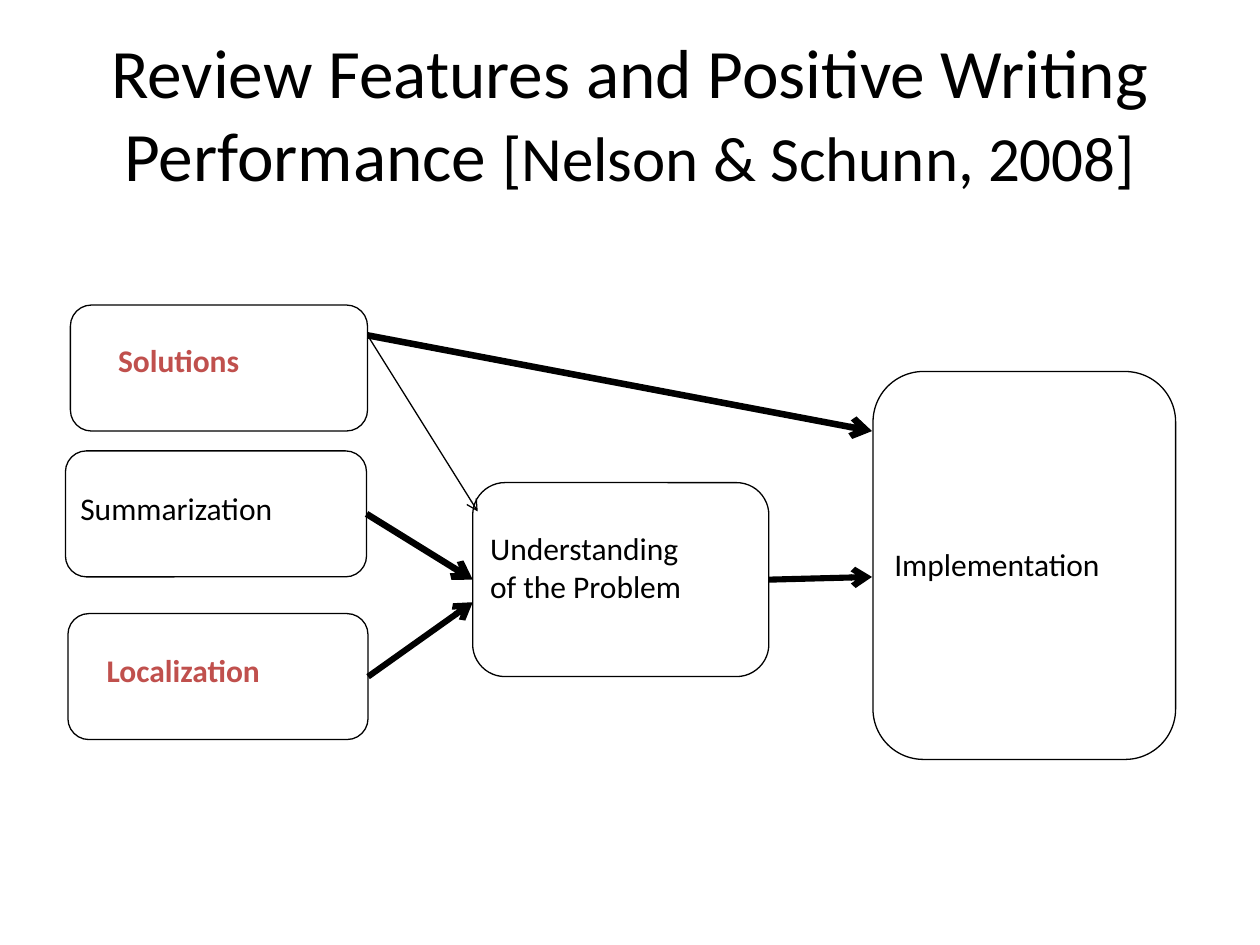
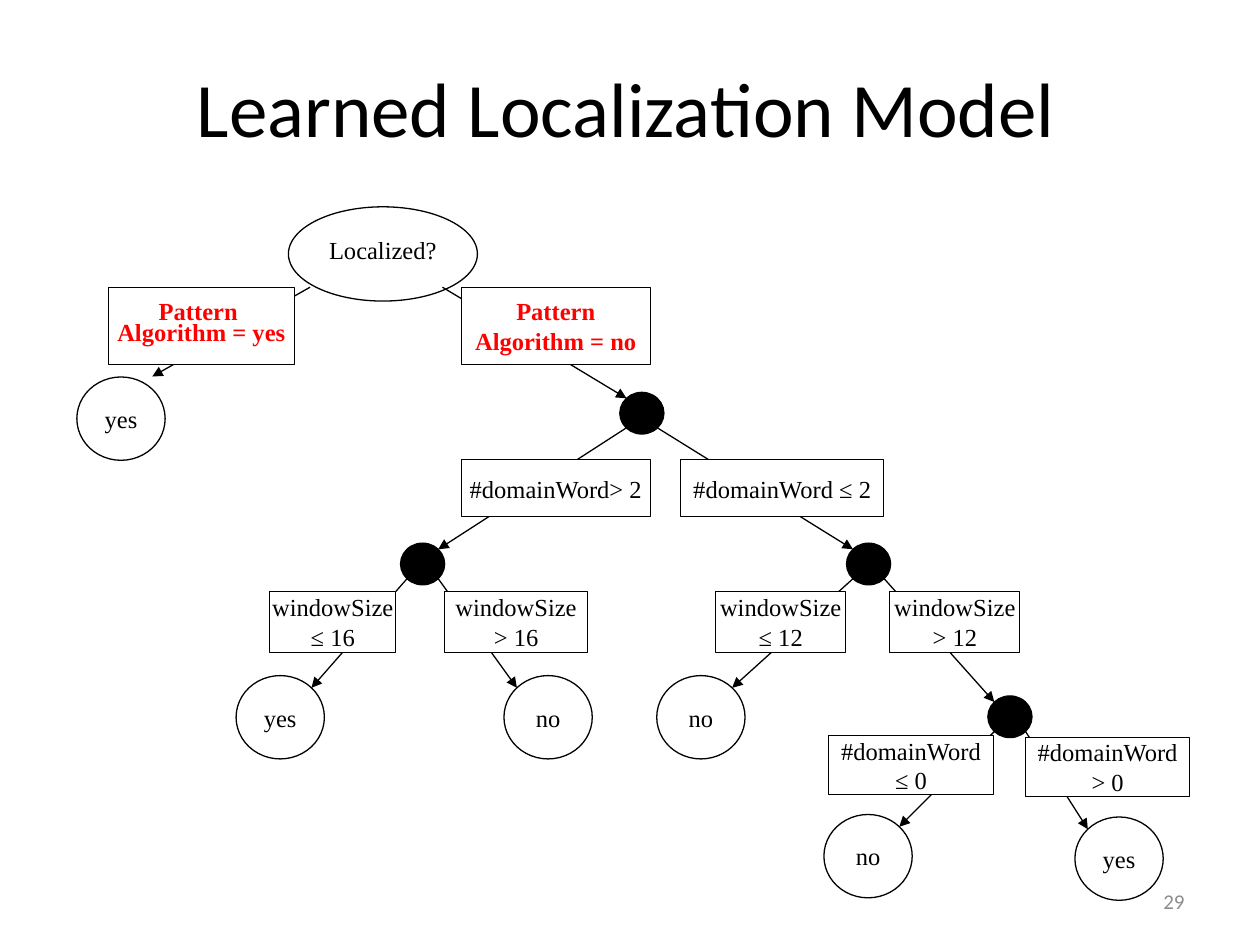
from math import sqrt

from lxml.etree import SubElement
from pptx import Presentation
from pptx.dml.color import RGBColor
from pptx.enum.shapes import MSO_CONNECTOR, MSO_SHAPE
from pptx.enum.text import MSO_ANCHOR, PP_ALIGN
from pptx.oxml.ns import qn
from pptx.util import Cm, Pt

BLACK = RGBColor(0x00, 0x00, 0x00)
WHITE = RGBColor(0xFF, 0xFF, 0xFF)
GRAY = RGBColor(0x8C, 0x8C, 0x8C)
BRICK = RGBColor(0xC0, 0x50, 0x4D)
RED = RGBColor(0xFF, 0x00, 0x00)


def write(sp, text, size=14, font="Calibri", color=BLACK, bold=False,
          align=PP_ALIGN.CENTER, anchor=MSO_ANCHOR.MIDDLE, inset=None, spacing=None):
    """Append text to the last paragraph of sp; each newline starts another."""
    tf = sp.text_frame
    tf.word_wrap = True
    tf.vertical_anchor = anchor
    if inset is not None:
        tf.margin_left = tf.margin_right = tf.margin_top = tf.margin_bottom = Cm(inset)
    for i, line in enumerate(text.split("\n")):
        p = tf.add_paragraph() if i else tf.paragraphs[-1]
        p.alignment = align
        if spacing:
            p.line_spacing = Pt(spacing)
        r = p.add_run()
        r.text = line
        r.font.name = font
        r.font.size = Pt(size)
        r.font.bold = bold
        r.font.color.rgb = color


def add_arrow(s, start, end, width=0.75, head="triangle"):
    c = s.shapes.add_connector(MSO_CONNECTOR.STRAIGHT, *(Cm(v) for v in start + end))
    c.line.color.rgb = BLACK
    c.line.width = Pt(width)
    SubElement(c._element.spPr.find(qn("a:ln")), qn("a:tailEnd"), type=head)
    SubElement(c._element.spPr, qn("a:effectLst"))
    return c


prs = Presentation()
prs.slide_width, prs.slide_height = Cm(25.4), Cm(19.05)

# Slides and titles
titles = [
    ((0, 0.74, 25.4, 3.05), [("Review Features and Positive Writing Performance ", 39.6),
                             ("[Nelson & Schunn, 2008]", 36)]),
    ((1.37, 0.56, 22.86, 3.18), [("Learned Localization Model ", 44)]),
]
for box, runs in titles:
    s = prs.slides.add_slide(prs.slide_layouts[6])
    sp = s.shapes.add_textbox(*(Cm(v) for v in box))
    for text, size in runs:
        write(sp, text, size=size)
features, tree = prs.slides

# Slide 1: review features leading to implementation
# outline box, label box, text, emphasis
factors = [
    ((1.42, 6.15, 5.99, 2.54), (2.13, 6.76, 3.84, 1.27), "Solutions", True),
    ((1.32, 9.09, 6.07, 2.54), (1.37, 9.73, 5.69, 1.27), "Summarization", False),
    ((1.37, 12.37, 6.05, 2.54), (1.9, 13, 4.88, 1.3), "Localization", True),
    ((9.53, 9.73, 5.97, 3.91), (9.63, 10.54, 5.87, 2.31), "Understanding\nof the Problem", False),
    ((17.6, 7.49, 6.1, 7.82), (17.78, 10.87, 6.1, 1.3), "Implementation", False),
]
boxes = {}
for outline, label, text, strong in factors:
    sp = features.shapes.add_shape(MSO_SHAPE.ROUNDED_RECTANGLE, *(Cm(v) for v in outline))
    sp.shadow.inherit = False
    sp.fill.background()
    sp.line.color.rgb = BLACK
    sp.line.width = Pt(0.75)
    boxes[text.split()[0]] = sp
    write(features.shapes.add_textbox(*(Cm(v) for v in label)), text, size=18,
          color=BRICK if strong else BLACK, bold=strong,
          align=PP_ALIGN.LEFT, anchor=MSO_ANCHOR.TOP)

# start, end, width, box joined at its right side, box joined at its left side
influences = [
    ((7.41, 6.76), (17.58, 8.69), 3.75, None, None),
    ((7.41, 6.76), (9.63, 10.31), 0.75, None, None),
    ((7.39, 10.36), (9.53, 11.68), 3.75, "Summarization", "Understanding"),
    ((7.42, 13.64), (9.53, 12.14), 3.5, "Localization", None),
    ((15.5, 11.68), (17.58, 11.63), 3.5, "Understanding", None),
]
for start, end, width, source, target in influences:
    c = add_arrow(features, start, end, width, head="arrow")
    if source:
        c.begin_connect(boxes[source], 3)
    if target:
        c.end_connect(boxes[target], 1)

# Slide 2: decision tree
sp = tree.shapes.add_textbox(Cm(18.21), Cm(17.65), Cm(5.92), Cm(1.02))
write(sp, "29", size=12, color=GRAY, align=PP_ALIGN.RIGHT)

ROOT, LEAF, DOT = (3.81, 1.9), (1.78, 1.68), (0.89, 0.84)
# centre x, centre y, size, text
nodes = {
    "root": (7.72, 5.12, ROOT, "Localized?"),
    "pattern": (2.44, 8.44, LEAF, "yes"),
    "no pattern": (12.94, 8.33, DOT, ""),
    "words > 2": (8.52, 11.37, DOT, ""),
    "words <= 2": (17.51, 11.37, DOT, ""),
    "window <= 16": (5.65, 14.46, LEAF, "yes"),
    "window > 16": (11.05, 14.46, LEAF, "no"),
    "window <= 12": (14.13, 14.46, LEAF, "no"),
    "window > 12": (20.36, 14.45, DOT, ""),
    "words <= 0": (17.5, 17.26, LEAF, "no"),
    "words > 0": (22.56, 17.31, LEAF, "yes"),
}
for x, y, (w, h), text in nodes.values():
    sp = tree.shapes.add_shape(MSO_SHAPE.OVAL, Cm(x - w / 2), Cm(y - h / 2), Cm(w), Cm(h))
    sp.shadow.inherit = False
    sp.fill.solid()
    sp.fill.fore_color.rgb = WHITE if text else BLACK
    sp.line.color.rgb = BLACK
    sp.line.width = Pt(0.75)
    if text:
        write(sp, text, font="Times New Roman", inset=0,
              spacing=12 if text == "Localized?" else None)

add_arrow(tree, (6.25, 5.79), (3.07, 7.59))
add_arrow(tree, (8.92, 5.79), (12.63, 8.03))

# Branches run between the diagonal points of the ellipses
branches = [
    ("no pattern", "words > 2", "words <= 2"),
    ("words > 2", "window <= 16", "window > 16"),
    ("words <= 2", "window <= 12", "window > 12"),
    ("window > 12", "words <= 0", "words > 0"),
]
k = sqrt(2) / 4
for parent, *children in branches:
    px, py, (pw, ph), _ = nodes[parent]
    for side, child in zip((-1, 1), children):
        cx, cy, (cw, ch), _ = nodes[child]
        add_arrow(tree, (px + side * k * pw, py + k * ph), (cx - side * k * cw, cy - k * ch))

tests = [
    (2.19, 5.79, 3.74, 1.56, "Pattern \nAlgorithm = yes"),
    (9.3, 5.79, 3.81, 1.56, "Pattern Algorithm = no"),
    (9.3, 9.27, 3.81, 1.15, "#domainWord> 2"),
    (13.72, 9.27, 4.1, 1.15, "#domainWord ≤ 2"),
    (5.44, 11.92, 2.54, 1.23, "windowSize\n≤ 16"),
    (8.97, 11.92, 2.87, 1.23, "windowSize\n> 16"),
    (14.43, 11.92, 2.62, 1.23, "windowSize\n≤ 12"),
    (17.94, 11.92, 2.62, 1.23, "windowSize\n> 12"),
    (16.7, 14.83, 3.33, 1.19, "#domainWord\n≤ 0"),
    (20.68, 14.86, 3.3, 1.19, "#domainWord\n> 0"),
]
for *box, text in tests:
    sp = tree.shapes.add_shape(MSO_SHAPE.RECTANGLE, *(Cm(v) for v in box))
    sp.shadow.inherit = False
    sp.fill.solid()
    sp.fill.fore_color.rgb = WHITE
    sp.line.color.rgb = BLACK
    sp.line.width = Pt(0.5)
    pattern = text.startswith("Pattern")
    write(sp, text, font="Times New Roman", color=RED if pattern else BLACK, bold=pattern,
          inset=0, spacing=12 if text.endswith("yes") else None)

prs.save("out.pptx")
